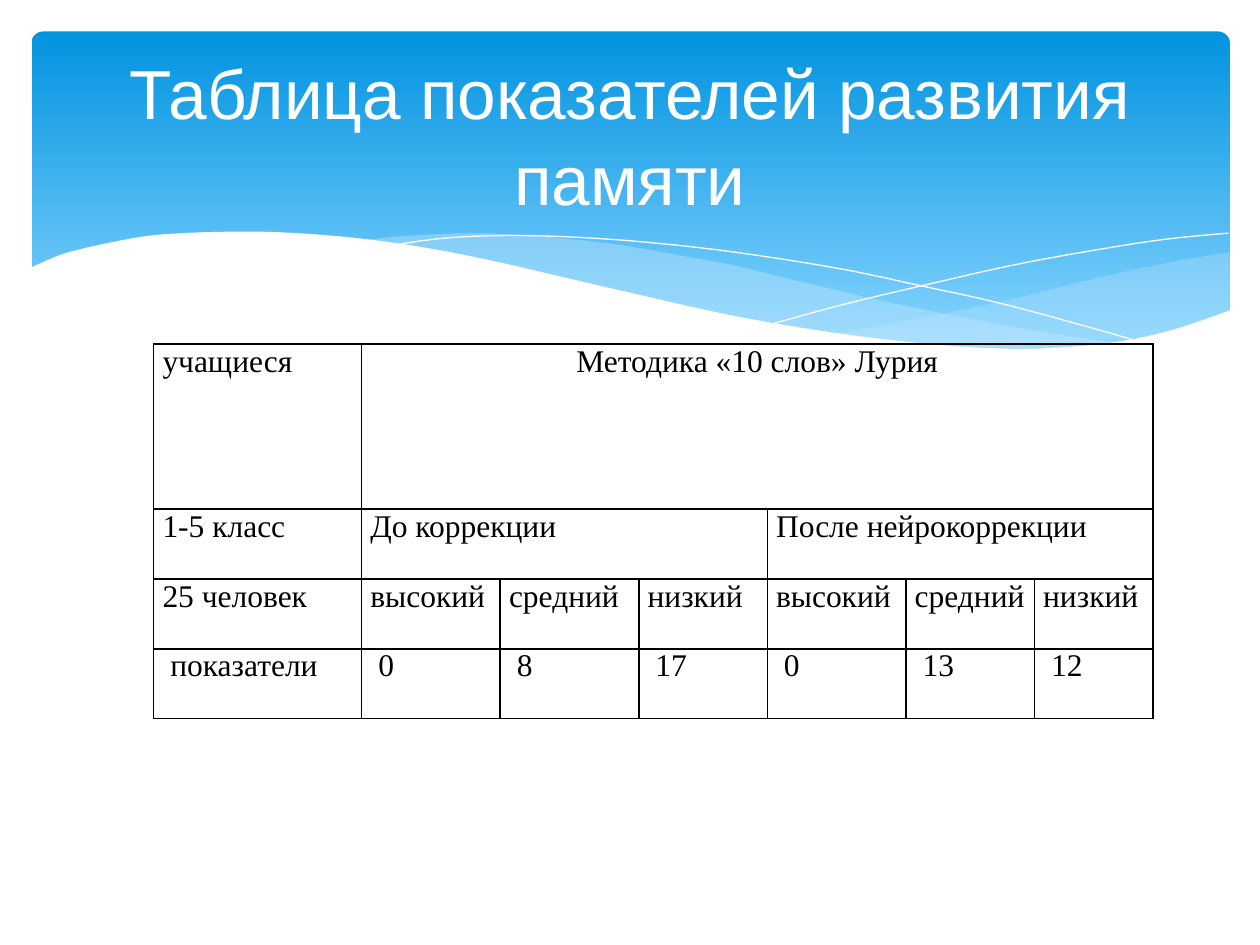
from itertools import chain

from lxml.etree import SubElement, fromstring
from pptx import Presentation
from pptx.dml.color import RGBColor
from pptx.enum.shapes import MSO_SHAPE
from pptx.enum.text import MSO_ANCHOR, PP_ALIGN
from pptx.oxml.ns import nsdecls, qn
from pptx.util import Inches, Pt

UNIT = Inches(0.1)
COLS, ROWS = 100, 75
DEEP = RGBColor(0x02, 0x93, 0xE0)
SKY = RGBColor(0x83, 0xD3, 0xFE)
PALE = RGBColor(0xC6, 0xE7, 0xFC)
WHITE = RGBColor(255, 255, 255)
BLACK = RGBColor(0, 0, 0)

RIGHT = [
    [(97.6, 20), (93.5, 20.7), (89.1, 21.6), (86.1, 22.3), (80.5, 23.7),
     (75.3, 24.8), (70.6, 25.7), (66.1, 26.5)],
    [(66.1, 26.5), (70.5, 27.1), (74.5, 27.5), (78.1, 27.7), (81.4, 27.8),
     (84.4, 27.7), (87.2, 27.4), (89.7, 27), (92.1, 26.5), (94.2, 25.9),
     (96.3, 25.2), (97.6, 24.7)],
]
LEFT = [
    [(89.3, 27.3), (83.7, 26.5), (77.5, 25.4), (70.6, 24), (62.9, 22.2),
     (58.4, 21.1), (54.1, 20.3), (50.2, 19.6), (46.5, 19.1), (42, 18.7),
     (38, 18.5), (34.4, 18.6), (31.3, 18.8), (28.6, 19.1)],
    [(28.6, 19.1), (34.2, 19.9), (40.4, 21.1), (44.9, 22.2), (53, 24),
     (60.1, 25.5), (66.5, 26.6), (72.2, 27.4), (77.3, 27.7), (81.8, 27.8),
     (85.7, 27.7), (89.3, 27.3)],
]
FALL = [[(30.9, 19.5), (35.3, 18.9), (40.1, 18.7), (45, 18.8), (51, 19.2),
         (58.2, 20), (66.5, 21.3), (72.7, 22.6), (79.5, 24.1), (86.9, 26.1),
         (90.7, 27.2)]]
RISE = [[(61.3, 25.7), (67.2, 24.1), (74.8, 22.3), (80.6, 21), (86.6, 19.9),
         (92.4, 19), (97.5, 18.5)]]
FRONT = [
    [(97.7, 24.6), (94, 25.9), (91, 26.7), (87.5, 27.3), (83.7, 27.6),
     (80.9, 27.7), (76.1, 27.5), (70.8, 27), (64.8, 26.2), (57.9, 25),
     (50.3, 23.3), (44.7, 22), (39.1, 20.7), (34, 19.7), (29.2, 19),
     (25, 18.6), (21.1, 18.4), (17.7, 18.4), (14.6, 18.5), (11.9, 18.7),
     (9.5, 19.1), (7.6, 19.5), (5.9, 19.9), (4.6, 20.3), (2.3, 21.3)],
    [(2.3, 32.9), (97.7, 32.9)],
]

HEADS = [
    [("учащиеся", 1), ("Методика «10 слов» Лурия", 6)],
    [("1-5 класс", 1), ("До коррекции", 3), ("После нейрокоррекции", 3)],
    [(word, 1) for word in ["25 человек"] + ["высокий", "средний", "низкий"] * 2],
    [(word, 1) for word in [" показатели", " 0", " 8", " 17", " 0", " 13", " 12"]],
]
WIDTHS = [16.5, 11, 11, 10.2, 11, 10.2, 9.4]
HEIGHTS = [13.1, 5.55, 5.55, 5.55]


def smooth(knots, steps=5):
    """Return points on a Catmull-Rom curve through the knots."""
    ends = [knots[0], *knots, knots[-1]]
    points = [knots[0]]
    for a, b, c, d in zip(ends, ends[1:], ends[2:], ends[3:]):
        for step in range(1, steps + 1):
            t = step / steps
            points.append(tuple(
                q + t / 2 * (r - p + t * (2 * p - 5 * q + 4 * r - s
                                          + t * (3 * q - p - 3 * r + s)))
                for p, q, r, s in zip(a, b, c, d)))
    return points


def wave(slide, box, curves, color, alpha=100, close=True):
    """Draw one filled wave, or a hairline when it is open."""
    left, top, width, height = box
    points = [(round((left + x * width / COLS) * UNIT),
               round((top + y * height / ROWS) * UNIT))
              for x, y in chain.from_iterable(map(smooth, curves))]
    pen = slide.shapes.build_freeform(*points[0])
    pen.add_line_segments(points[1:], close=close)
    shape = pen.convert_to_shape()
    shape.shadow.inherit = False
    if not close:
        shape.fill.background()
        shape.line.color.rgb = color
        shape.line.width = Pt(0)
        return
    shape.line.fill.background()
    shape.fill.solid()
    shape.fill.fore_color.rgb = color
    if alpha < 100:
        tint = shape.fill._xPr.find(".//" + qn("a:srgbClr"))
        SubElement(tint, qn("a:alpha"), val=str(alpha * 1000))


def header(slide, box):
    """Draw the blue band and the waves along its lower edge."""
    left, top, width, height = box
    band = slide.shapes.add_shape(
        MSO_SHAPE.ROUNDED_RECTANGLE,
        *(round(n * UNIT) for n in (left + 0.025 * width, top + height / 30,
                                    0.951 * width, 0.36 * height)))
    band.adjustments[0] = 0.034
    band.shadow.inherit = False
    band.line.fill.background()
    band.fill.gradient()
    band.fill.gradient_angle = 270
    for stop, color, place in zip(band.fill.gradient_stops, (DEEP, SKY), (0, 0.9)):
        stop.color.rgb = color
        stop.position = place
    wave(slide, box, RIGHT, PALE, 29)
    wave(slide, box, LEFT, PALE, 40)
    wave(slide, box, FALL, WHITE, close=False)
    wave(slide, box, RISE, WHITE, close=False)
    wave(slide, box, FRONT, WHITE)


def title(slide, box, words):
    """Write the centred heading in its box."""
    frame = slide.shapes.add_textbox(*(round(n * UNIT) for n in box)).text_frame
    frame.word_wrap = True
    frame.vertical_anchor = MSO_ANCHOR.MIDDLE
    para = frame.paragraphs[0]
    para.text = words
    para.alignment = PP_ALIGN.CENTER
    para.line_spacing = 1.04
    para.font.name = "Arial"
    para.font.size = Pt(39.6)
    para.font.color.rgb = WHITE


def border(cell):
    """Clear the cell's fill and rule its four sides."""
    cell.fill.background()
    props = cell._tc.get_or_add_tcPr()
    for place, side in enumerate("LRTB"):
        props.insert(place, fromstring(
            f'<a:ln{side} {nsdecls("a")} w="{Pt(1)}"><a:solidFill>'
            f'<a:srgbClr val="{BLACK}"/></a:solidFill></a:ln{side}>'))


def scores(slide, box):
    """Fill the table of memory scores, scaled to its box."""
    left, top, width, height = box
    table = slide.shapes.add_table(
        len(HEIGHTS), len(WIDTHS), *(round(n * UNIT) for n in box)).table
    table.first_row = table.horz_banding = False
    for column, share in zip(table.columns, WIDTHS):
        column.width = round(share * width / sum(WIDTHS) * UNIT)
    for row, share in zip(table.rows, HEIGHTS):
        row.height = round(share * height / sum(HEIGHTS) * UNIT)
    for cell in table.iter_cells():
        border(cell)
        cell.margin_left = cell.margin_right = Inches(0.07)
        cell.margin_top = cell.margin_bottom = 0
    for down, heads in enumerate(HEADS):
        across = 0
        for words, span in heads:
            cell = table.cell(down, across)
            if span > 1:
                cell.merge(table.cell(down, across + span - 1))
            para = cell.text_frame.paragraphs[0]
            para.text = words
            para.alignment = PP_ALIGN.CENTER if span == 6 else PP_ALIGN.JUSTIFY
            para.font.name = "Times New Roman"
            para.font.size = Pt(18)
            para.font.color.rgb = BLACK
            across += span


def main():
    """Build and save the slide."""
    deck = Presentation()
    deck.slide_width, deck.slide_height = COLS * UNIT, ROWS * UNIT
    slide = deck.slides.add_slide(deck.slide_layouts[6])
    header(slide, (0, 0, COLS, ROWS))
    scores(slide, (12.2, 27.3, sum(WIDTHS), sum(HEIGHTS)))
    title(slide, (5, 3.7, 90, 13.7), "Таблица показателей развития памяти")
    deck.save("out.pptx")


if __name__ == "__main__":
    main()
